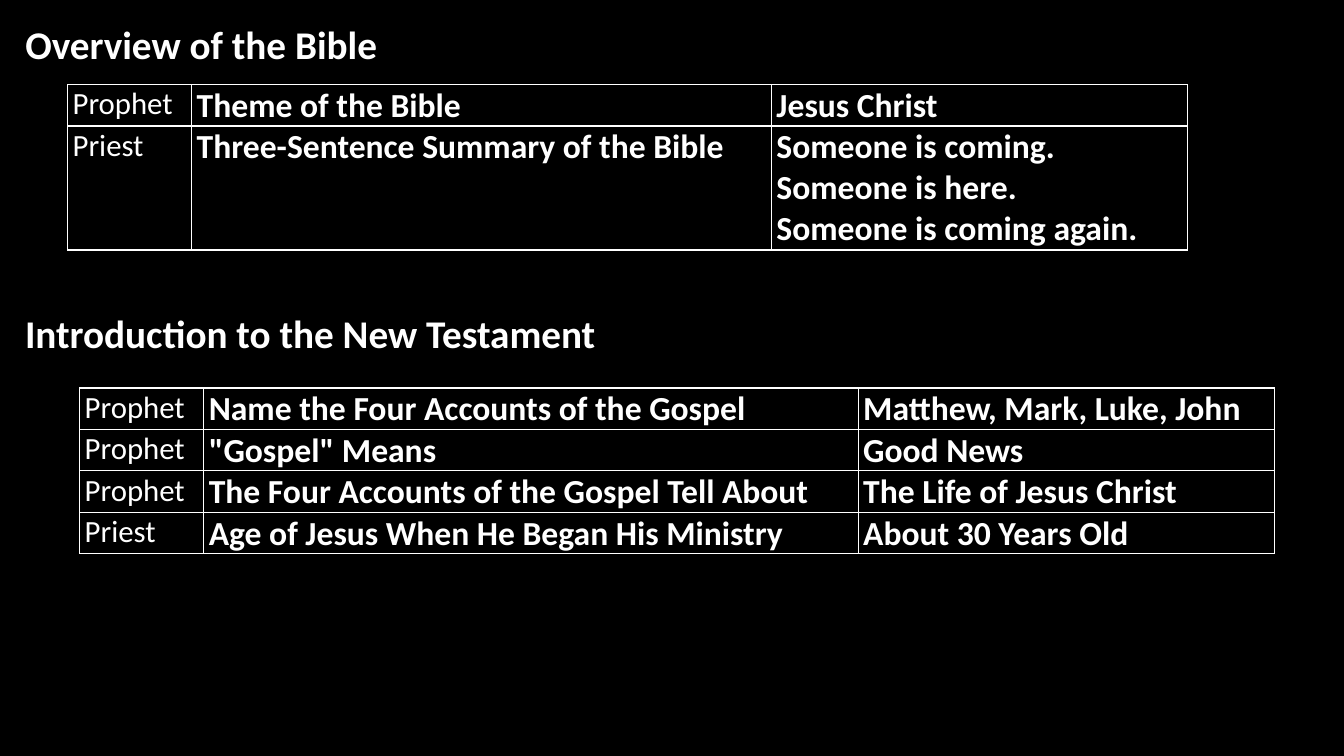
from dataclasses import dataclass

import pptx
import pptx.dml.color
import pptx.enum.text
import pptx.oxml
import pptx.oxml.ns
import pptx.util

SLIDE_WIDTH, SLIDE_HEIGHT = 13.33, 7.5
COLUMNS, ROWS = 100, 75
LABEL_WIDTH, ANSWER_WIDTH, LINE_HEIGHT = 9.23, 30.98, 4.1


@dataclass(frozen=True)
class Theme:
    font: str = "Calibri"
    paper: str = "000000"
    ink: str = "FFFFFF"
    heading_size: int = 28
    entry_size: int = 24
    label_size: int = 22
    border_width: int = 1


class SlideBuilder:
    def __init__(self, slide, theme):
        self.slide = slide
        self.theme = theme
        background = slide.background.fill
        background.solid()
        background.fore_color.rgb = pptx.dml.color.RGBColor.from_string(theme.paper)

    def across(self, columns):
        return pptx.util.Inches(SLIDE_WIDTH * columns / COLUMNS)

    def down(self, rows):
        return pptx.util.Inches(SLIDE_HEIGHT * rows / ROWS)

    def add_span(self, para, text, size, bold):
        para.alignment = pptx.enum.text.PP_ALIGN.LEFT
        span = para.add_run()
        span.text = text
        span.font.name = self.theme.font
        span.font.size = pptx.util.Pt(size)
        span.font.bold = bold
        span.font.color.rgb = pptx.dml.color.RGBColor.from_string(self.theme.ink)

    def fill_heading(self, box, text, left, top, width, height):
        box.left, box.top = self.across(left), self.down(top)
        box.width, box.height = self.across(width), self.down(height)
        frame = box.text_frame
        frame.word_wrap = True
        frame.auto_size = pptx.enum.text.MSO_AUTO_SIZE.SHAPE_TO_FIT_TEXT
        frame.vertical_anchor = pptx.enum.text.MSO_ANCHOR.TOP
        self.add_span(frame.paragraphs[0], text, self.theme.heading_size, True)

    def title(self, text, *place):
        self.fill_heading(self.slide.shapes.title, text, *place)

    def heading(self, text, *place):
        box = self.slide.shapes.add_textbox(0, 0, 0, 0)
        self.fill_heading(box, text, *place)

    def border(self, cell):
        properties = cell._tc.get_or_add_tcPr()
        width = pptx.util.Pt(self.theme.border_width)
        for side in ("lnL", "lnR", "lnT", "lnB"):
            properties.append(pptx.oxml.parse_xml(
                f'<a:{side} {pptx.oxml.ns.nsdecls("a")} w="{width}"><a:solidFill>'
                f'<a:srgbClr val="{self.theme.ink}"/></a:solidFill></a:{side}>'))

    def fill_cell(self, cell, lines, size, bold):
        cell.margin_left = pptx.util.Inches(0.05)
        cell.margin_top = cell.margin_right = pptx.util.Inches(0.01)
        cell.margin_bottom = 0
        self.border(cell)
        cell.fill.background()
        frame = cell.text_frame
        for index, line in enumerate(lines):
            para = frame.add_paragraph() if index else frame.paragraphs[0]
            self.add_span(para, line, size, bold)

    def table(self, left, top, question_width, entries):
        """Draw rows of (label, question, answer lines)."""
        widths = (LABEL_WIDTH, question_width, ANSWER_WIDTH)
        heights = [LINE_HEIGHT * len(answer) for _, _, answer in entries]
        table = self.slide.shapes.add_table(
            len(entries), len(widths), self.across(left), self.down(top),
            self.across(sum(widths)), self.down(sum(heights))).table
        table.first_row = table.horz_banding = False
        for column, width in zip(table.columns, widths):
            column.width = self.across(width)
        for row, height, (label, question, answer) in zip(table.rows, heights, entries):
            row.height = self.down(height)
            label_cell, question_cell, answer_cell = row.cells
            self.fill_cell(label_cell, [label], self.theme.label_size, False)
            self.fill_cell(question_cell, [question], self.theme.entry_size, True)
            self.fill_cell(answer_cell, answer, self.theme.entry_size, True)


def main():
    deck = pptx.Presentation()
    deck.slide_width = pptx.util.Inches(SLIDE_WIDTH)
    deck.slide_height = pptx.util.Inches(SLIDE_HEIGHT)
    title_only = deck.slide_layouts.get_by_name("Title Only")
    builder = SlideBuilder(deck.slides.add_slide(title_only), Theme())

    builder.title("Overview of the Bible", 1.13, 1.5, 50.34, 5.7)
    builder.heading("Introduction to the New Testament", 1.13, 30.2, 87.47, 5.7)
    builder.table(5.03, 8.4, 43.14, [
        ("Prophet", "Theme of the Bible", ["Jesus Christ"]),
        ("Priest", "Three-Sentence Summary of the Bible",
         ["Someone is coming.", "Someone is here.", "Someone is coming again."]),
    ])
    builder.table(5.93, 38.5, 48.69, [
        ("Prophet", "Name the Four Accounts of the Gospel", ["Matthew, Mark, Luke, John"]),
        ("Prophet", '"Gospel" Means', ["Good News"]),
        ("Prophet", "The Four Accounts of the Gospel Tell About", ["The Life of Jesus Christ"]),
        ("Priest", "Age of Jesus When He Began His Ministry", ["About 30 Years Old"]),
    ])
    deck.save("out.pptx")


if __name__ == "__main__":
    main()
